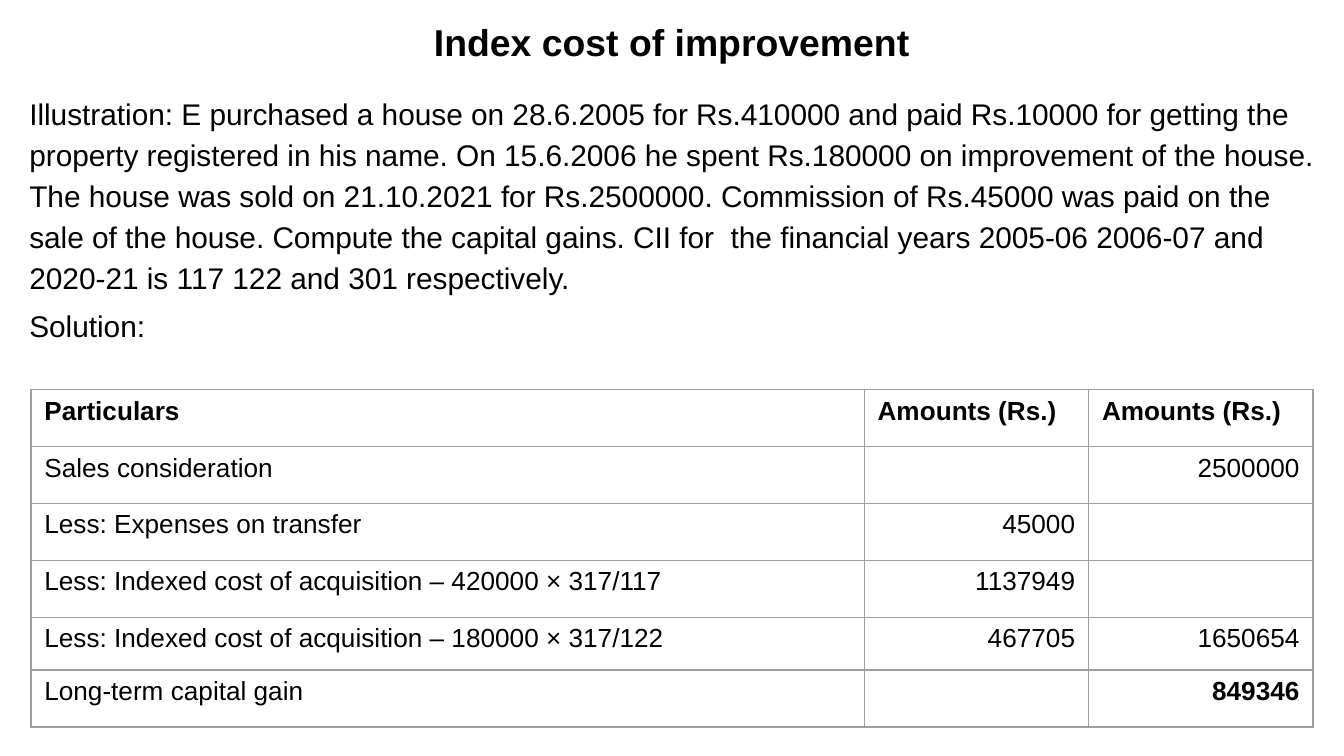
from typing import NamedTuple

import pptx
import pptx.dml.color
import pptx.enum.text
import pptx.oxml
import pptx.oxml.ns
import pptx.util

Inches = pptx.util.Inches
Pt = pptx.util.Pt
Align = pptx.enum.text.PP_ALIGN
Anchor = pptx.enum.text.MSO_ANCHOR

FONT = "Arial"
COLORS = {"background": "FFFFFF", "text": "000000", "border": "9E9E9E"}
SLIDE_WIDTH = 10
SLIDE_HEIGHT = SLIDE_WIDTH * 9 / 16
TITLE_HEIGHT = 0.62
COLUMN_WIDTHS = [6.2, 1.67, 1.67]
ROW_SHARES = [0.42, 0.42, 0.42, 0.42, 0.39, 0.42]
TABLE_HEIGHT = 2.51
BORDER_WIDTH = 0.75

ILLUSTRATION = (
    "Illustration: E purchased a house on 28.6.2005 for Rs.410000 and paid Rs.10000 "
    "for getting the property registered in his name. On 15.6.2006 he spent Rs.180000 "
    "on improvement of the house. The house was sold on 21.10.2021 for Rs.2500000. "
    "Commission of Rs.45000 was paid on the sale of the house. Compute the capital "
    "gains. CII for  the financial years 2005-06 2006-07 and 2020-21 is 117 122 and "
    "301 respectively."
)


class GainRow(NamedTuple):
    particulars: str
    amount: str = ""
    total: str = ""


ROWS = [
    GainRow("Particulars", "Amounts (Rs.)", "Amounts (Rs.)"),
    GainRow("Sales consideration", total="2500000"),
    GainRow("Less: Expenses on transfer", "45000"),
    GainRow("Less: Indexed cost of acquisition – 420000 × 317/117", "1137949"),
    GainRow("Less: Indexed cost of acquisition – 180000 × 317/122", "467705", "1650654"),
    GainRow("Long-term capital gain", total="849346"),
]


def rgb(name: str) -> pptx.dml.color.RGBColor:
    return pptx.dml.color.RGBColor.from_string(COLORS[name])


def add_run(p, text: str, size: float, bold: bool = False) -> None:
    r = p.add_run()
    r.text = text
    r.font.name = FONT
    r.font.size = Pt(size)
    r.font.bold = bold
    r.font.color.rgb = rgb("text")


def add_text_frame(slide, top: float, height: float, anchor):
    """Add a text box across the whole slide width and return its frame."""
    sp = slide.shapes.add_textbox(0, Inches(top), Inches(SLIDE_WIDTH), Inches(height))
    tf = sp.text_frame
    tf.word_wrap = True
    tf.vertical_anchor = anchor
    return tf


def add_title(slide) -> None:
    p = add_text_frame(slide, 0, TITLE_HEIGHT, Anchor.MIDDLE).paragraphs[0]
    p.alignment = Align.CENTER
    add_run(p, "Index cost of improvement", 20, bold=True)


def add_body(slide) -> None:
    tf = add_text_frame(slide, TITLE_HEIGHT, SLIDE_HEIGHT - TITLE_HEIGHT, Anchor.TOP)
    for i, text in enumerate([ILLUSTRATION, "Solution:"]):
        p = tf.add_paragraph() if i else tf.paragraphs[0]
        p.line_spacing = 1.15
        p.space_before = Pt(3.6)
        p._p.get_or_add_pPr().set("marL", str(Inches(0.12)))
        add_run(p, text, 16)


def set_borders(cell) -> None:
    tc_pr = cell._tc.get_or_add_tcPr()
    for side in "LRTB":
        tc_pr.append(pptx.oxml.parse_xml(
            f'<a:ln{side} {pptx.oxml.ns.nsdecls("a")} w="{Pt(BORDER_WIDTH)}">'
            f'<a:solidFill><a:srgbClr val="{COLORS["border"]}"/></a:solidFill>'
            f'</a:ln{side}>'
        ))


def fill_cell(cell, text: str, bold: bool, alignment) -> None:
    set_borders(cell)
    cell.fill.background()
    if text:
        p = cell.text_frame.paragraphs[0]
        p.alignment = alignment
        add_run(p, text, 14, bold)


def add_gain_table(slide) -> None:
    table = slide.shapes.add_table(
        len(ROWS), len(COLUMN_WIDTHS), Inches(0.23), Inches(2.9),
        Inches(sum(COLUMN_WIDTHS)), Inches(TABLE_HEIGHT),
    ).table
    for column, width in zip(table.columns, COLUMN_WIDTHS):
        column.width = Inches(width)
    for i, (row, share) in enumerate(zip(ROWS, ROW_SHARES)):
        table.rows[i].height = Inches(TABLE_HEIGHT * share / sum(ROW_SHARES))
        for j, text in enumerate(row):
            is_header = i == 0
            is_result = i == len(ROWS) - 1 and j == len(row) - 1
            alignment = Align.LEFT if is_header or j == 0 else Align.RIGHT
            fill_cell(table.cell(i, j), text, is_header or is_result, alignment)


def main() -> None:
    prs = pptx.Presentation()
    prs.slide_width = Inches(SLIDE_WIDTH)
    prs.slide_height = Inches(SLIDE_HEIGHT)
    slide = prs.slides.add_slide(prs.slide_layouts[6])
    slide.background.fill.solid()
    slide.background.fill.fore_color.rgb = rgb("background")
    add_title(slide)
    add_body(slide)
    add_gain_table(slide)
    prs.save("out.pptx")


if __name__ == "__main__":
    main()
